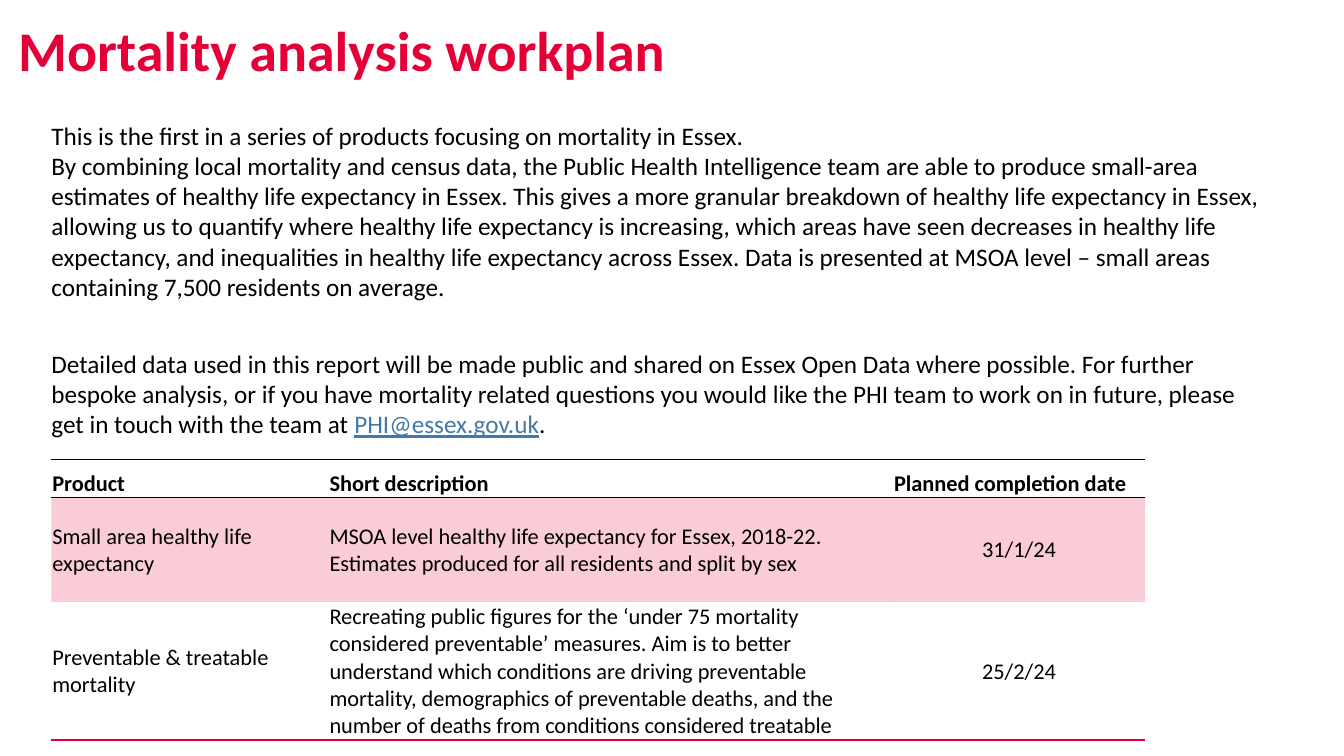
from lxml.etree import SubElement
from pptx import Presentation
from pptx.dml.color import RGBColor
from pptx.enum.text import MSO_ANCHOR, MSO_AUTO_SIZE, PP_ALIGN
from pptx.oxml.ns import qn
from pptx.util import Pt

COLORS = {"red": "E40037", "black": "000000", "link": "4179AA"}

INTRO = (
    "This is the first in a series of products focusing on mortality in Essex.\n"
    "By combining local mortality and census data, the Public Health Intelligence team are able to "
    "produce small-area estimates of healthy life expectancy in Essex. This gives a more granular "
    "breakdown of healthy life expectancy in Essex, allowing us to quantify where healthy life "
    "expectancy is increasing, which areas have seen decreases in healthy life expectancy, and "
    "inequalities in healthy life expectancy across Essex. Data is presented at MSOA level – small "
    "areas containing 7,500 residents on average."
)
CONTACT = (
    "Detailed data used in this report will be made public and shared on Essex Open Data where "
    "possible. For further bespoke analysis, or if you have mortality related questions you would "
    "like the PHI team to work on in future, please get in touch with the team at "
)
PRODUCTS = [
    ("Product", "Short description", "Planned completion date"),
    ("Small area healthy life expectancy",
     "MSOA level healthy life expectancy for Essex, 2018-22.\n"
     "Estimates produced for all residents and split by sex",
     "31/1/24"),
    ("Preventable & treatable mortality",
     "Recreating public figures for the ‘under 75 mortality considered preventable’ measures. Aim is "
     "to better understand which conditions are driving preventable mortality, demographics of "
     "preventable deaths, and the number of deaths from conditions considered treatable",
     "25/2/24"),
]


def add_text(p, text, size=18, color="black", bold=False, underline=False, font="Calibri"):
    """Add formatted runs to a paragraph, with a line break at each newline."""
    for i, line in enumerate(text.split("\n")):
        if i:
            p.add_line_break()
        r = p.add_run()
        r.text = line
        r.font.name, r.font.size = font, Pt(size)
        r.font.bold, r.font.underline = bold, underline
        r.font.color.rgb = RGBColor.from_string(COLORS[color])


class SlideBuilder:
    """Holds the presentation, the current slide and its text style."""

    def __init__(self, width, height):
        """Start a presentation with one title-only slide."""
        self.prs = Presentation()
        self.prs.slide_width, self.prs.slide_height = Pt(width), Pt(height)
        self.s = self.prs.slides.add_slide(self.prs.slide_layouts[5])

    def frame(self, sp):
        """Give a shape's text frame zero insets, wrapping and top anchoring."""
        tf = sp.text_frame
        tf.margin_left = tf.margin_top = tf.margin_right = tf.margin_bottom = 0
        tf.word_wrap, tf.auto_size = True, MSO_AUTO_SIZE.NONE
        tf.vertical_anchor = MSO_ANCHOR.TOP
        return tf

    def title(self, text, left, top, width, height):
        """Place and format the title placeholder."""
        sp = self.s.shapes.title
        sp.left, sp.top, sp.width, sp.height = Pt(left), Pt(top), Pt(width), Pt(height)
        p = self.frame(sp).paragraphs[0]
        p.alignment = PP_ALIGN.LEFT
        add_text(p, text, size=40, color="red", bold=True)

    def body(self, paragraphs, left, top, width, height, before, after):
        """Add a text box from lists of (text, format) pairs."""
        sp = self.s.shapes.add_textbox(Pt(left), Pt(top), Pt(width), Pt(height))
        tf = self.frame(sp)
        for i, parts in enumerate(paragraphs):
            p = tf.add_paragraph() if i else tf.paragraphs[0]
            p.space_before, p.space_after = Pt(before if i else 0), Pt(after)
            for text, fmt in parts:
                add_text(p, text, **fmt)

    def border(self, cell, side, color=None, width=1):
        """Draw one side of a cell, or clear it when no colour is given."""
        ln = SubElement(cell._tc.get_or_add_tcPr(), qn(f"a:ln{side}"), w=str(Pt(width)))
        if color:
            SubElement(SubElement(ln, qn("a:solidFill")), qn("a:srgbClr"), val=COLORS[color])
        else:
            SubElement(ln, qn("a:noFill"))

    def tint(self, cell, color, opacity):
        """Fill a cell with a partly transparent colour."""
        cell.fill.solid()
        cell.fill.fore_color.rgb = RGBColor.from_string(COLORS[color])
        fill = cell._tc.tcPr.find(qn("a:solidFill"))
        SubElement(fill[0], qn("a:alpha"), val=str(opacity * 1000))

    def table(self, rows, left, top, widths, heights, lines, tinted):
        """Add a table ruled by lines, a dict of (row, side) to colour and width."""
        tbl = self.s.shapes.add_table(len(rows), len(widths), Pt(left), Pt(top),
                                      Pt(sum(widths)), Pt(sum(heights))).table
        tbl.first_row = tbl.horz_banding = False
        for column, width in zip(tbl.columns, widths):
            column.width = Pt(width)
        for i, row in enumerate(rows):
            tbl.rows[i].height = Pt(heights[i])
            for j, text in enumerate(row):
                cell = tbl.cell(i, j)
                cell.margin_left = cell.margin_top = cell.margin_right = Pt(0.7)
                cell.margin_bottom = 0
                cell.vertical_anchor = MSO_ANCHOR.MIDDLE if i else MSO_ANCHOR.BOTTOM
                for side in "LRTB":
                    self.border(cell, side, *lines.get((i, side), ()))
                if i == tinted:
                    self.tint(cell, "red", 20)
                else:
                    cell.fill.background()
                p = cell.text_frame.paragraphs[0]
                p.alignment = PP_ALIGN.CENTER if i and j == 2 else PP_ALIGN.LEFT
                add_text(p, text, size=16, bold=i == 0)


def main():
    """Build the workplan slide."""
    sb = SlideBuilder(960, 540)
    sb.title("Mortality analysis workplan", 13, 10.8, 936.7, 44.6)
    contact = [(CONTACT, {}), ("PHI@essex.gov.uk", {"color": "link", "underline": True}), (".", {})]
    sb.body([[(INTRO, {})], contact], 36.7, 85.7, 867.6, 169.2, before=22, after=11.3)
    rule = ("black", 0.75)
    lines = {(0, "T"): rule, (0, "B"): rule, (1, "T"): rule, (2, "B"): ("red", 1)}
    sb.table(PRODUCTS, 36.7, 328.3, [198, 403.2, 180], [26.8, 74.9, 98.6], lines, tinted=1)
    sb.prs.save("out.pptx")


if __name__ == "__main__":
    main()
